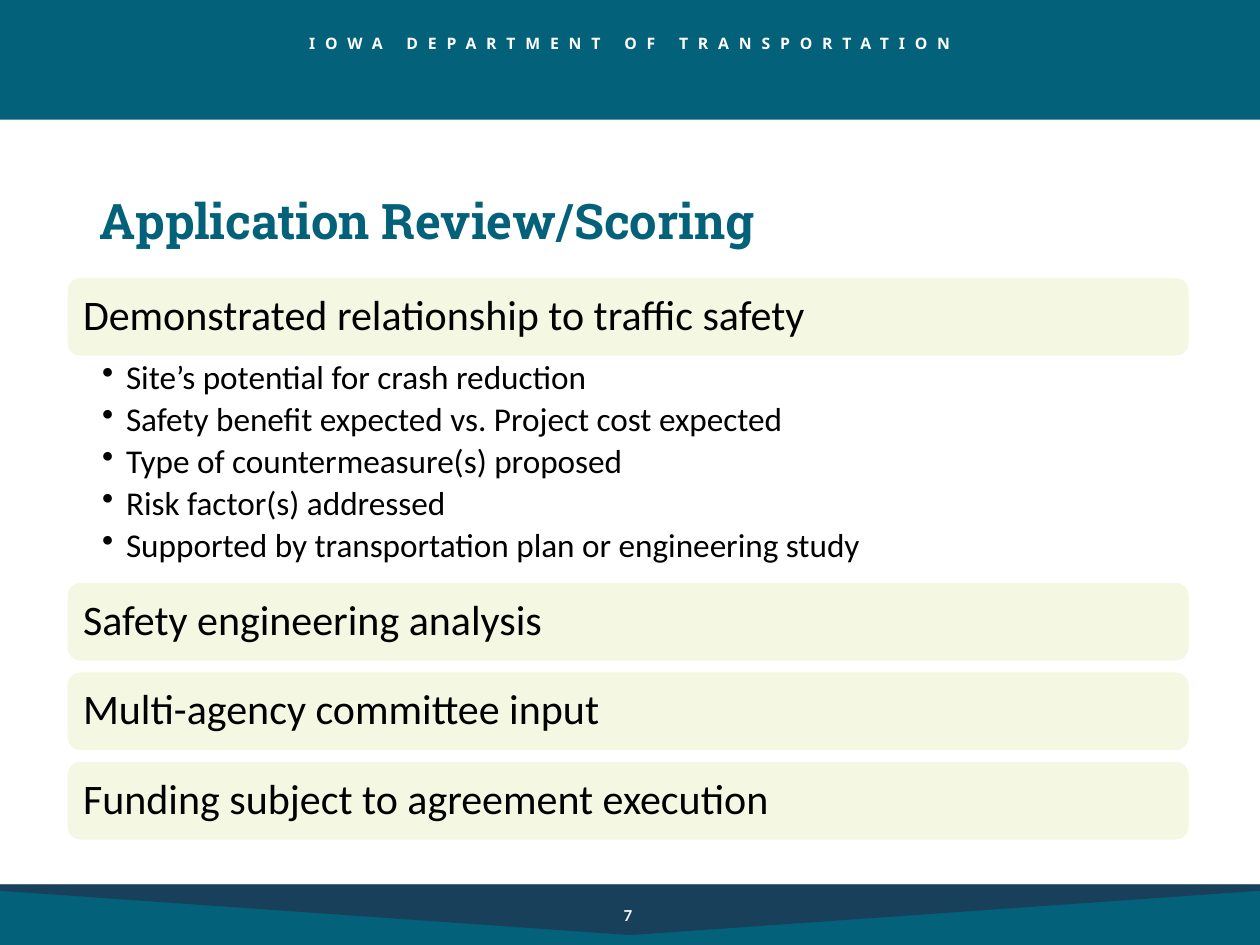
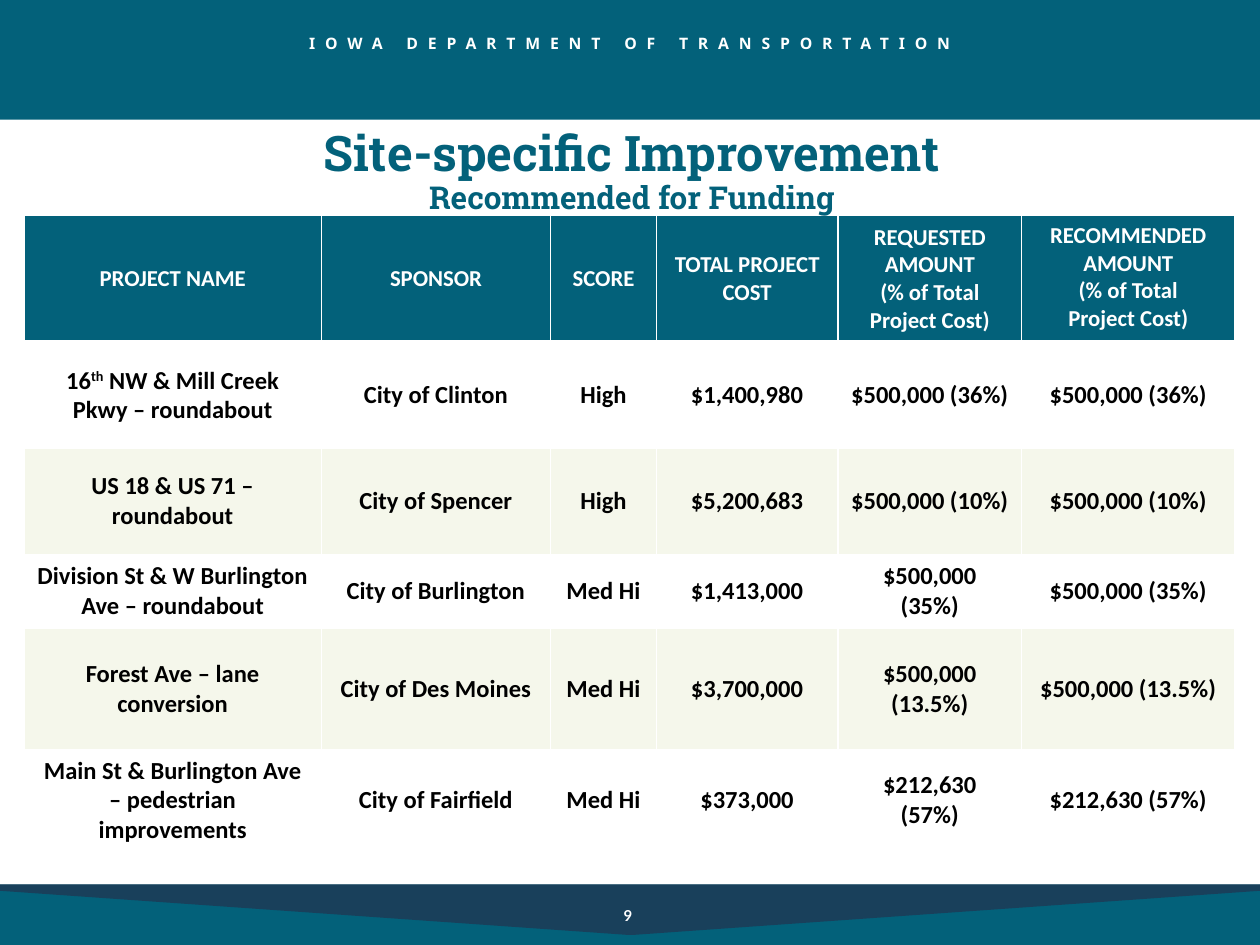
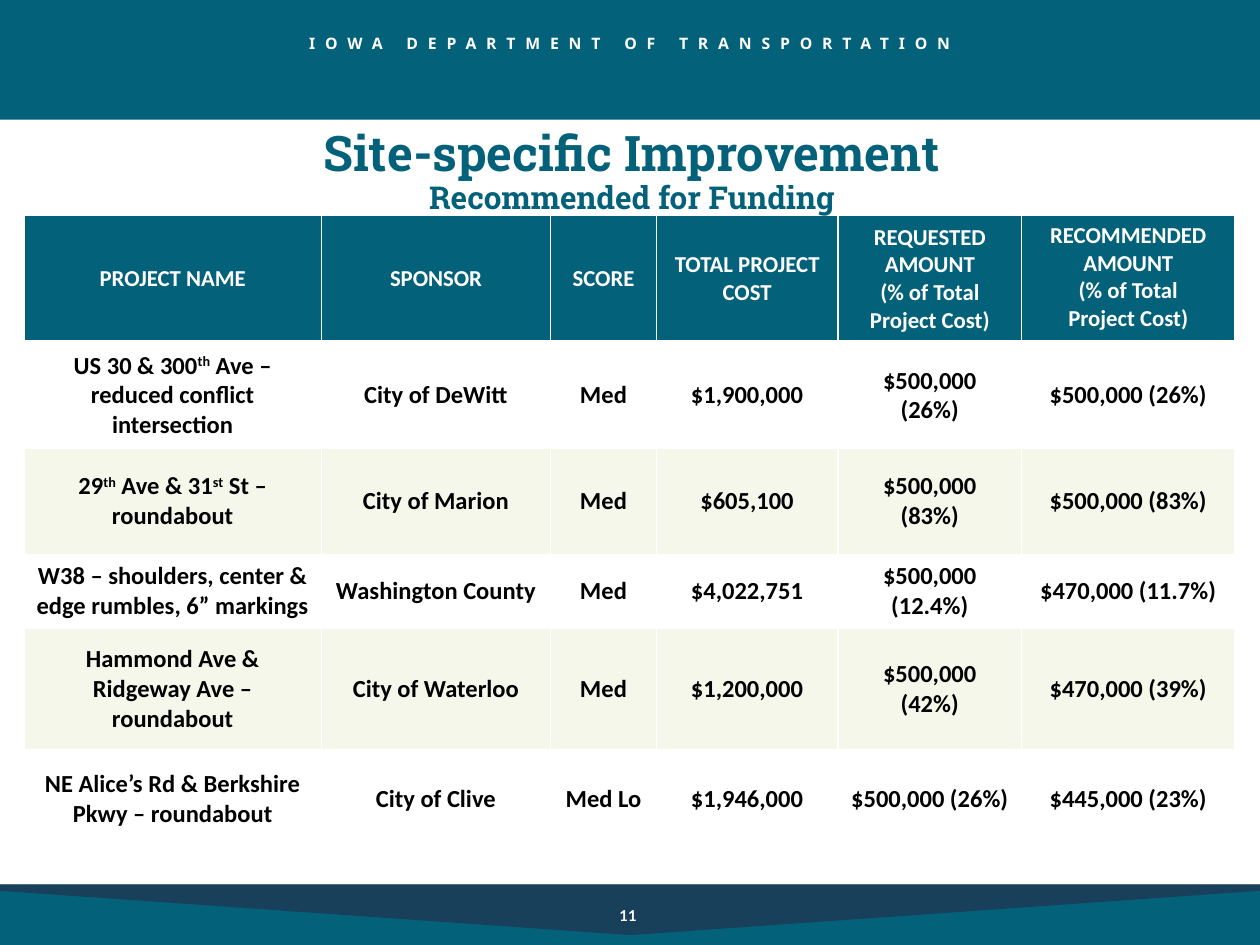
import lxml.etree
import pptx
import pptx.dml.color
import pptx.enum.shapes
import pptx.enum.text
import pptx.oxml.ns
import pptx.util

Inches, Pt = pptx.util.Inches, pptx.util.Pt
RGBColor = pptx.dml.color.RGBColor
ALIGN = pptx.enum.text.PP_ALIGN
ANCHOR = pptx.enum.text.MSO_ANCHOR
SHAPE = pptx.enum.shapes.MSO_SHAPE
qn = pptx.oxml.ns.qn

TEAL = RGBColor(0x03, 0x61, 0x7A)
NAVY = RGBColor(0x19, 0x40, 0x5B)
CREAM = RGBColor(0xF4, 0xF7, 0xE1)
ROW_TINT = RGBColor(0xF5, 0xF7, 0xEB)
WHITE = RGBColor(0xFF, 0xFF, 0xFF)
BLACK = RGBColor(0x00, 0x00, 0x00)

TITLE_FONT, BODY_FONT = "Roboto Slab", "Calibri"
SLIDE_WIDTH, SLIDE_HEIGHT = 10, 7.5
FOOTER_TOP = 7.02

# Scoring criteria
CRITERIA_LEFT, CRITERIA_WIDTH, CRITERION_HEIGHT = 0.53, 8.91, 0.63
TRAFFIC_SAFETY_POINTS = [
    "Site’s potential for crash reduction",
    "Safety benefit expected vs. Project cost expected",
    "Type of countermeasure(s) proposed",
    "Risk factor(s) addressed",
    "Supported by transportation plan or engineering study",
]
OTHER_CRITERIA = [
    "Safety engineering analysis",
    "Multi-agency committee input",
    "Funding subject to agreement execution",
]

# Project tables: ^ marks a superscript, a new line starts a paragraph
COLUMN_WIDTHS = [2.36, 1.82, 0.84, 1.44, 1.46, 1.69]
ROW_HEIGHTS = [1.01, 0.84, 0.84, 0.59, 0.96, 0.79]
HEADINGS = [
    "PROJECT NAME", "SPONSOR", "SCORE", "TOTAL PROJECT COST",
    "REQUESTED AMOUNT\n(% of Total Project Cost)",
    "RECOMMENDED AMOUNT\n(% of Total\vProject Cost)",
]
HIGHER_SCORED = [
    ["16^th^ NW & Mill Creek Pkwy – roundabout", "City of Clinton", "High",
     "$1,400,980", "$500,000 (36%)", "$500,000 (36%)"],
    ["US 18 & US 71 – roundabout", "City of Spencer", "High",
     "$5,200,683", "$500,000 (10%)", "$500,000 (10%)"],
    ["Division St & W Burlington Ave – roundabout", "City of Burlington", "Med Hi",
     "$1,413,000", "$500,000\n(35%)", "$500,000 (35%)"],
    ["Forest Ave – lane conversion", "City of Des Moines", "Med Hi",
     "$3,700,000", "$500,000\n(13.5%)", "$500,000 (13.5%)"],
    ["Main St & Burlington Ave – pedestrian improvements", "City of Fairfield", "Med Hi",
     "$373,000", "$212,630\n(57%)", "$212,630 (57%)"],
]
MEDIUM_SCORED = [
    ["US 30 & 300^th^ Ave – reduced conflict intersection", "City of DeWitt", "Med",
     "$1,900,000", "$500,000\n(26%)", "$500,000 (26%)"],
    ["29^th^ Ave & 31^st^ St – roundabout", "City of Marion", "Med",
     "$605,100", "$500,000\n(83%)", "$500,000 (83%)"],
    ["W38 – shoulders, center & edge rumbles, 6” markings", "Washington County", "Med",
     "$4,022,751", "$500,000\n(12.4%)", "$470,000 (11.7%)"],
    ["Hammond Ave & Ridgeway Ave – roundabout", "City of Waterloo", "Med",
     "$1,200,000", "$500,000\n(42%)", "$470,000 (39%)"],
    ["NE Alice’s Rd & Berkshire Pkwy – roundabout", "City of Clive", "Med Lo",
     "$1,946,000", "$500,000 (26%)", "$445,000 (23%)"],
]


class Deck:
    def __init__(self):
        self.presentation = pptx.Presentation()
        self.presentation.slide_width = Inches(SLIDE_WIDTH)
        self.presentation.slide_height = Inches(SLIDE_HEIGHT)
        self.slide = None

    def new_slide(self, number):
        """Start a slide with the shared bands, agency name and page number."""
        self.slide = self.presentation.slides.add_slide(self.presentation.slide_layouts[6])
        self.block(0, 0, SLIDE_WIDTH, 0.95, TEAL)
        self.block(0, FOOTER_TOP, SLIDE_WIDTH, SLIDE_HEIGHT - FOOTER_TOP, TEAL)
        self.chevron()
        agency = self.text_box(0, 0.22, 9.99, 0.25, ["IOWA DEPARTMENT OF TRANSPORTATION"],
                               [9], "Noto Sans", WHITE, True, ALIGN.CENTER, ANCHOR.TOP)
        agency.paragraphs[0].runs[0].font._element.set("spc", "560")
        self.text_box(3.86, 7.15, 2.25, 0.23, [str(number)],
                      [8.6], "Lato", WHITE, True, ALIGN.CENTER)

    def paint(self, shape, fill, line=None):
        shape.shadow.inherit = False
        shape.fill.solid()
        shape.fill.fore_color.rgb = fill
        if line is None:
            shape.line.fill.background()
        else:
            shape.line.color.rgb = line
            shape.line.width = Pt(1)
        return shape

    def block(self, left, top, width, height, fill, line=None, kind=SHAPE.RECTANGLE):
        shape = self.slide.shapes.add_shape(
            kind, Inches(left), Inches(top), Inches(width), Inches(height))
        return self.paint(shape, fill, line)

    def chevron(self):
        shoulder, tip = 7.07, 7.42
        outline = [(SLIDE_WIDTH, FOOTER_TOP), (SLIDE_WIDTH, shoulder),
                   (5.03, tip), (4.98, tip), (0, shoulder)]
        builder = self.slide.shapes.build_freeform(0, Inches(FOOTER_TOP))
        builder.add_line_segments([(Inches(x), Inches(y)) for x, y in outline])
        self.paint(builder.convert_to_shape(), NAVY)

    def style(self, paragraph, size, font, color, bold=False, align=ALIGN.LEFT):
        paragraph.alignment = align
        paragraph.font.size = Pt(size)
        paragraph.font.name = font
        paragraph.font.bold = bold
        paragraph.font.color.rgb = color

    def fill_text(self, frame, lines):
        """Put one line in each paragraph, raising the parts between ^ marks."""
        for index, line in enumerate(lines):
            paragraph = frame.paragraphs[0] if index == 0 else frame.add_paragraph()
            parts = line.split("^")
            paragraph.text = parts[0]
            for position, part in enumerate(parts[1:], 1):
                run = paragraph.add_run()
                run.text = part
                if position % 2:
                    run.font._element.set("baseline", "30000")
        return frame.paragraphs

    def text_box(self, left, top, width, height, lines, sizes, font, color,
                 bold=False, align=ALIGN.LEFT, anchor=ANCHOR.MIDDLE, spacing=None):
        frame = self.slide.shapes.add_textbox(
            Inches(left), Inches(top), Inches(width), Inches(height)).text_frame
        frame.word_wrap = True
        frame.vertical_anchor = anchor
        for paragraph, size in zip(self.fill_text(frame, lines), sizes):
            paragraph.line_spacing = spacing
            self.style(paragraph, size, font, color, bold, align)
        return frame

    def title(self, left, top, width, height, lines, align=ALIGN.LEFT):
        self.text_box(left, top, width, height, lines, [28, 18], TITLE_FONT, TEAL,
                      True, align, spacing=0.9)

    def criterion(self, top, text):
        bar = self.block(CRITERIA_LEFT, top, CRITERIA_WIDTH, CRITERION_HEIGHT,
                         CREAM, WHITE, SHAPE.ROUNDED_RECTANGLE)
        frame = bar.text_frame
        frame.word_wrap = True
        frame.vertical_anchor = ANCHOR.MIDDLE
        paragraph = self.fill_text(frame, [text])[0]
        paragraph.line_spacing = 0.9
        self.style(paragraph, 24, BODY_FONT, BLACK)

    def bullets(self, top, height, points):
        frame = self.slide.shapes.add_textbox(
            Inches(CRITERIA_LEFT), Inches(top), Inches(CRITERIA_WIDTH), Inches(height)).text_frame
        frame.word_wrap = True
        frame.margin_left, frame.margin_right = Inches(0.28), Inches(0.19)
        frame.margin_top = frame.margin_bottom = Inches(0.03)
        for paragraph in self.fill_text(frame, points):
            paragraph.line_spacing = 0.9
            paragraph.space_after = Pt(3.5)
            properties = paragraph._p.get_or_add_pPr()
            properties.set("marL", str(Inches(0.19)))
            properties.set("indent", str(-Inches(0.19)))
            lxml.etree.SubElement(properties, qn("a:buChar")).set("char", "•")
            self.style(paragraph, 19, BODY_FONT, BLACK)

    def cell_borders(self, cell, row):
        """White rules, thicker between the headings and the first project."""
        properties = cell._tc.get_or_add_tcPr()
        widths = {"a:lnL": 1, "a:lnR": 1,
                  "a:lnT": 3 if row == 1 else 1, "a:lnB": 3 if row == 0 else 1}
        for position, (side, width) in enumerate(widths.items()):
            rule = lxml.etree.Element(qn(side), w=str(Pt(width)))
            fill = lxml.etree.SubElement(rule, qn("a:solidFill"))
            lxml.etree.SubElement(fill, qn("a:srgbClr")).set("val", str(WHITE))
            properties.insert(position, rule)

    def project_table(self, left, top, projects):
        rows = [HEADINGS] + projects
        table = self.slide.shapes.add_table(
            len(rows), len(HEADINGS), Inches(left), Inches(top),
            Inches(sum(COLUMN_WIDTHS)), Inches(sum(ROW_HEIGHTS))).table
        table.horz_banding = False
        for column, width in zip(table.columns, COLUMN_WIDTHS):
            column.width = Inches(width)
        for row, (texts, height) in enumerate(zip(rows, ROW_HEIGHTS)):
            table.rows[row].height = Inches(height)
            heading = row == 0
            fill = TEAL if heading else WHITE if row % 2 else ROW_TINT
            for column, text in enumerate(texts):
                cell = table.cell(row, column)
                cell.fill.solid()
                cell.fill.fore_color.rgb = fill
                cell.vertical_anchor = ANCHOR.MIDDLE
                for paragraph in self.fill_text(cell.text_frame, text.split("\n")):
                    self.style(paragraph, 13 if heading else 14, BODY_FONT,
                               WHITE if heading else BLACK, True, ALIGN.CENTER)
                self.cell_borders(cell, row)
        table.cell(0, len(HEADINGS) - 1).vertical_anchor = ANCHOR.TOP


def main():
    deck = Deck()

    # Review and scoring criteria
    deck.new_slide(7)
    deck.title(0.69, 1.23, 8.62, 1.09, ["Application Review/Scoring"])
    deck.criterion(2.2, "Demonstrated relationship to traffic safety")
    deck.bullets(2.83, 1.79, TRAFFIC_SAFETY_POINTS)
    for index, text in enumerate(OTHER_CRITERIA):
        deck.criterion(4.62 + index * 0.71, text)

    # Recommended projects, by score
    for number, projects in [(9, HIGHER_SCORED), (11, MEDIUM_SCORED)]:
        deck.new_slide(number)
        deck.project_table(0.19, 1.71, projects)
        deck.title(0.23, 1.11, 9.57, 0.52,
                   ["Site-specific Improvement", "Recommended for Funding"], ALIGN.CENTER)

    deck.presentation.save("out.pptx")


if __name__ == "__main__":
    main()
